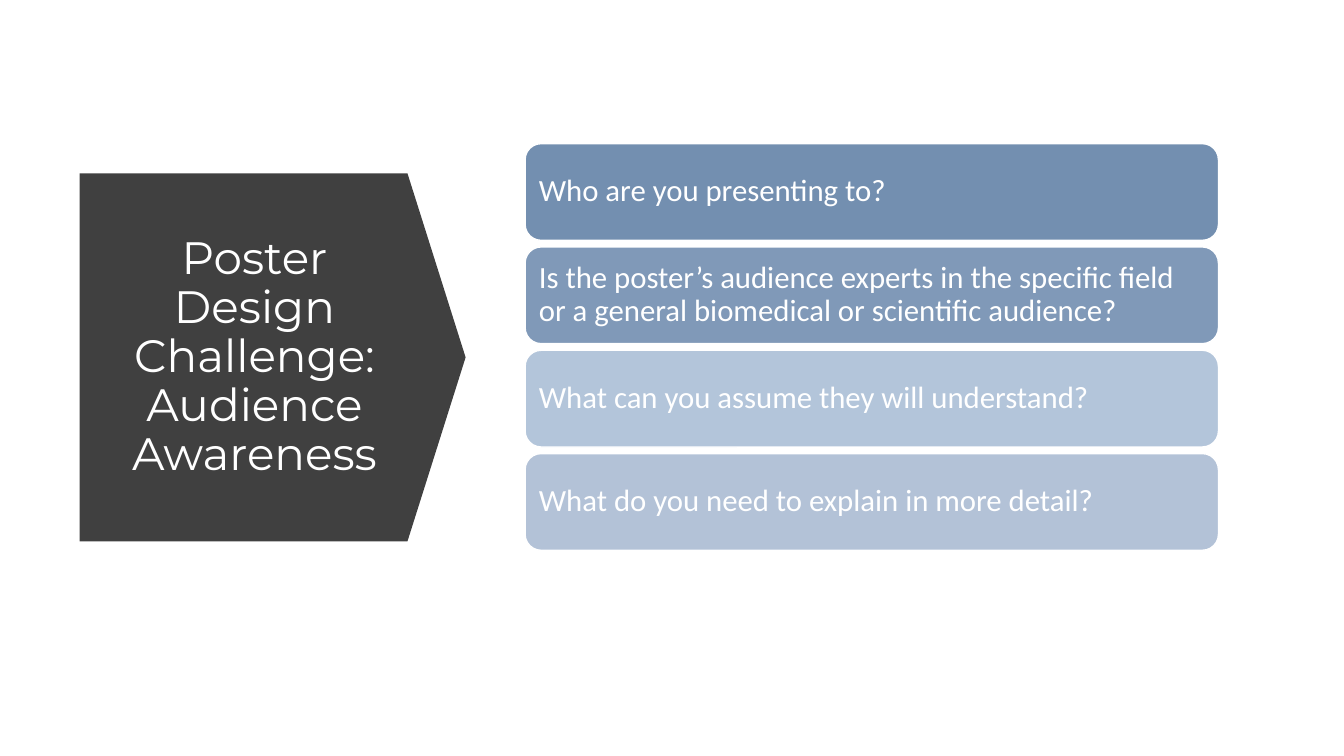
from dataclasses import dataclass

from pptx import Presentation, util as u
from pptx.dml.color import RGBColor
from pptx.enum import shapes as sh, text as tx

SCALE = 914400 // 200


@dataclass(frozen=True)
class Theme:
    white: str = "FFFFFF"
    dark: str = "404040"
    head: str = "Montserrat"
    body: str = "Calibri"
    big: float = 32.4
    mid: float = 22


@dataclass(frozen=True)
class Box:
    left: int
    top: int
    width: int
    height: int

    def emu(self) -> list[u.Emu]:
        return [px(n) for n in (self.left, self.top, self.width, self.height)]


@dataclass(frozen=True)
class Bar:
    words: str
    fill: str


LOOK = Theme()
ARROW = Box(176, 326, 730, 766)
TITLE = Box(194, 430, 622, 558)
FIRST = Box(1042, 285, 1376, 192)
STEP = 205
BARS = [
    Bar("Who are you presenting to?", "738FB0"),
    Bar("Is the poster’s audience experts in the specific field "
        "or a general biomedical or scientific audience?", "8099B8"),
    Bar("What can you assume they will understand?", "B3C5DA"),
    Bar("What do you need to explain in more detail?", "B3C2D7"),
]


def px(count: int) -> u.Emu:
    return u.Emu(count * SCALE)


def paint(shape, fill: str, line: str | None = None) -> None:
    shape.shadow.inherit = False
    shape.fill.solid()
    shape.fill.fore_color.rgb = RGBColor.from_string(fill)
    if line is None:
        shape.line.fill.background()
    else:
        shape.line.color.rgb = RGBColor.from_string(line)
        shape.line.width = u.Pt(1)


def write(shape, words: str, *, face: str, size: float,
          align: tx.PP_ALIGN, inset: int) -> None:
    frame = shape.text_frame
    frame.word_wrap = True
    frame.auto_size = tx.MSO_AUTO_SIZE.NONE
    frame.vertical_anchor = tx.MSO_ANCHOR.MIDDLE
    frame.margin_left = frame.margin_right = px(inset)
    frame.margin_top = frame.margin_bottom = px(inset // 2)
    para = frame.paragraphs[0]
    para.alignment = align
    para.line_spacing = 0.9
    run = para.add_run()
    run.text = words
    run.font.name = face
    run.font.size = u.Pt(size)
    run.font.color.rgb = RGBColor.from_string(LOOK.white)


def draw_title(slide) -> None:
    arrow = slide.shapes.add_shape(sh.MSO_SHAPE.DOWN_ARROW, *ARROW.emu())
    arrow.rotation = 270
    arrow.adjustments[0] = 1
    arrow.adjustments[1] = 0.158
    paint(arrow, LOOK.dark)
    title = slide.shapes.add_textbox(*TITLE.emu())
    write(title, "Poster Design Challenge: Audience Awareness", face=LOOK.head,
          size=LOOK.big, align=tx.PP_ALIGN.CENTER, inset=20)


def draw_bar(slide, bar: Bar, row: int) -> None:
    place = Box(FIRST.left, FIRST.top + row * STEP, FIRST.width, FIRST.height)
    shape = slide.shapes.add_shape(sh.MSO_SHAPE.ROUNDED_RECTANGLE, *place.emu())
    paint(shape, bar.fill, LOOK.white)
    write(shape, bar.words, face=LOOK.body, size=LOOK.mid,
          align=tx.PP_ALIGN.LEFT, inset=18)


def main() -> None:
    deck = Presentation()
    deck.slide_width, deck.slide_height = px(2667), px(1500)
    slide = deck.slides.add_slide(deck.slide_layouts[6])
    draw_title(slide)
    for row, bar in enumerate(BARS):
        draw_bar(slide, bar, row)
    deck.save("out.pptx")


if __name__ == "__main__":
    main()
